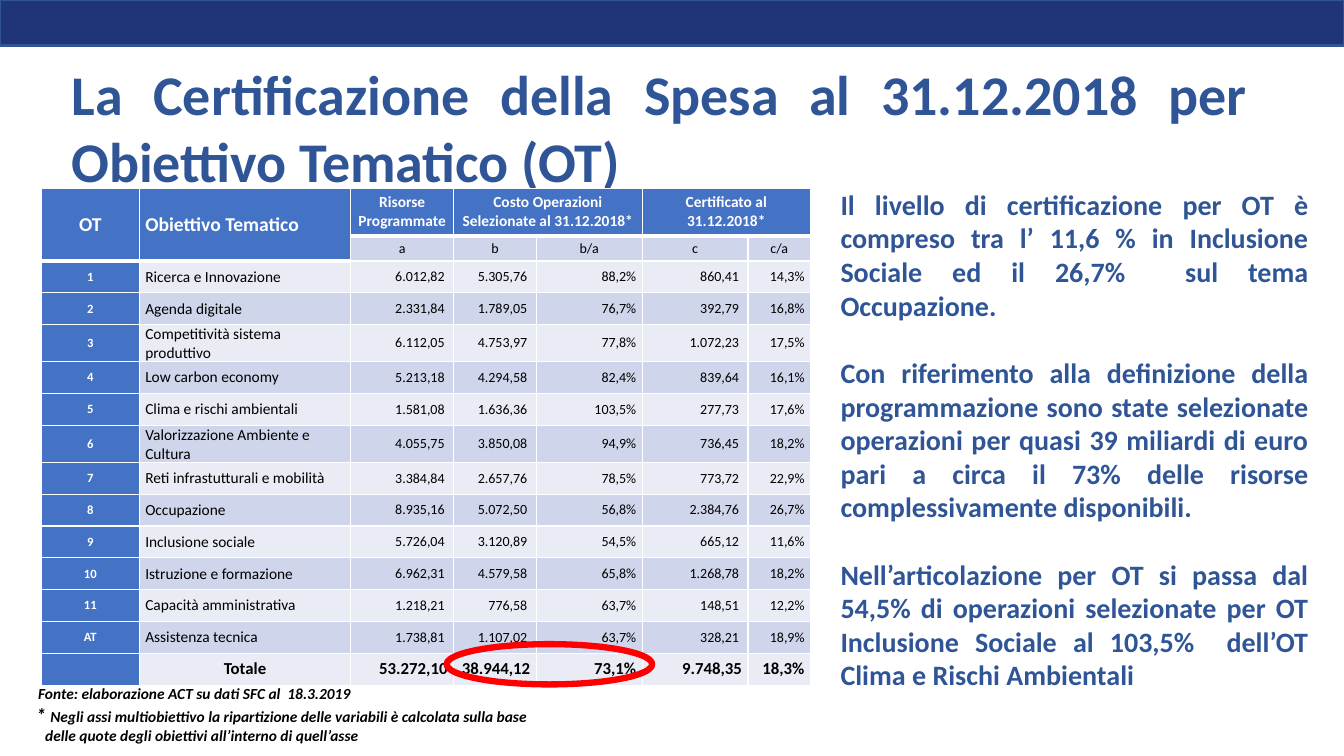
from lxml import etree
from pptx import Presentation
from pptx.dml.color import RGBColor
from pptx.enum.shapes import MSO_SHAPE
from pptx.enum.text import MSO_ANCHOR, PP_ALIGN
from pptx.oxml.ns import qn
from pptx.util import Inches, Pt

RECTANGLE, OVAL = MSO_SHAPE.RECTANGLE, MSO_SHAPE.OVAL
LEFT, CENTER, RIGHT, JUSTIFY = PP_ALIGN.LEFT, PP_ALIGN.CENTER, PP_ALIGN.RIGHT, PP_ALIGN.JUSTIFY
MIDDLE = MSO_ANCHOR.MIDDLE

WIDTH, HEIGHT = Inches(13.333), Inches(7.5)
FONT = "Calibri"
NAVY, NAVY_EDGE, HEADING = "203478", "325491", "2F5597"
HEADER, BAND_DARK, BAND_LIGHT = "4472C4", "CFD5EA", "E9EBF5"
WHITE, BLACK, RED = "FFFFFF", "000000", "FF0000"

COLUMN_SHARES = [7.28, 15.75, 7.65, 6.15, 7.88, 7.88, 4.65]
ROW_SHARES = [6.27, 3.33] + [4.21] * 13
AMOUNT_COLUMNS = (2, 3, 5)

HEADERS = ["OT", "Obiettivo Tematico", "Risorse Programmate",
           "Costo Operazioni Selezionate al 31.12.2018*", "",
           "Certificato al 31.12.2018*", ""]
SUBHEADERS = ["", "", "a", "b", "b/a", "c", "c/a"]
OBJECTIVES = [
    ["1", "Ricerca e Innovazione", "6.012,82", "5.305,76", "88,2%", "860,41", "14,3%"],
    ["2", "Agenda digitale", "2.331,84", "1.789,05", "76,7%", "392,79", "16,8%"],
    ["3", "Competitività sistema produttivo", "6.112,05", "4.753,97", "77,8%", "1.072,23", "17,5%"],
    ["4", "Low carbon economy", "5.213,18", "4.294,58", "82,4%", "839,64", "16,1%"],
    ["5", "Clima e rischi ambientali", "1.581,08", "1.636,36", "103,5%", "277,73", "17,6%"],
    ["6", "Valorizzazione Ambiente e Cultura", "4.055,75", "3.850,08", "94,9%", "736,45", "18,2%"],
    ["7", "Reti infrastutturali e mobilità", "3.384,84", "2.657,76", "78,5%", "773,72", "22,9%"],
    ["8", "Occupazione", "8.935,16", "5.072,50", "56,8%", "2.384,76", "26,7%"],
    ["9", "Inclusione sociale", "5.726,04", "3.120,89", "54,5%", "665,12", "11,6%"],
    ["10", "Istruzione e formazione", "6.962,31", "4.579,58", "65,8%", "1.268,78", "18,2%"],
    ["11", "Capacità amministrativa", "1.218,21", "776,58", "63,7%", "148,51", "12,2%"],
    ["AT", "Assistenza tecnica", "1.738,81", "1.107,02", "63,7%", "328,21", "18,9%"],
]
TOTALS = ["", "Totale", "53.272,10", "38.944,12", "73,1%", "9.748,35", "18,3%"]

TITLE = "La Certificazione della Spesa al 31.12.2018 per Obiettivo Tematico (OT)"
COMMENTS = [
    "Il livello di certificazione per OT è compreso tra l’ 11,6 % in Inclusione Sociale "
    "ed il 26,7%  sul tema Occupazione.",
    "Con riferimento alla definizione della programmazione sono state selezionate operazioni "
    "per quasi 39 miliardi di euro pari a circa il 73% delle risorse complessivamente disponibili.",
    "Nell’articolazione per OT si passa dal 54,5% di operazioni selezionate per OT Inclusione "
    "Sociale al 103,5%  dell’OT Clima e Rischi Ambientali",
]
NOTES = [
    (0.28, [("Fonte: elaborazione ACT su dati SFC al  18.3.2019", 11)]),
    (0.26, [("* ", 14),
            ("Negli assi multiobiettivo la ripartizione delle variabili è calcolata sulla base", 11)]),
    (0.35, [("delle quote degli obiettivi all’interno di quell’asse", 11)]),
]


def color(value):
    return RGBColor.from_string(value)


def across(percent):
    return round(WIDTH * percent / 100)


def down(percent):
    return round(HEIGHT * percent / 100)


def area(left, top, width, height):
    return across(left), down(top), across(width), down(height)


def add_run(paragraph, text, size, tint, bold=True, italic=False):
    run = paragraph.add_run()
    run.text = text
    run.font.name = FONT
    run.font.size = Pt(size)
    run.font.bold = bold
    run.font.italic = italic
    run.font.color.rgb = color(tint)


def add_outline_shape(slide, kind, place, line, weight, fill=None):
    shape = slide.shapes.add_shape(kind, *place)
    shape.shadow.inherit = False
    if fill:
        shape.fill.solid()
        shape.fill.fore_color.rgb = color(fill)
    else:
        shape.fill.background()
    shape.line.color.rgb = color(line)
    shape.line.width = Pt(weight)


def add_text(slide, place, paragraphs, tint, align, gap=0, italic=False):
    frame = slide.shapes.add_textbox(*place).text_frame
    frame.word_wrap = True
    for index, (indent, runs) in enumerate(paragraphs):
        paragraph = frame.paragraphs[0] if index == 0 else frame.add_paragraph()
        paragraph.alignment = align
        if index and gap:
            paragraph.space_before = Pt(gap)
        if indent:
            properties = paragraph._p.get_or_add_pPr()
            properties.set("marL", str(Inches(indent)))
            properties.set("indent", "0")
        for text, size in runs:
            add_run(paragraph, text, size, tint, italic=italic)


def set_borders(cell, top, bottom):
    properties = cell._tc.get_or_add_tcPr()
    for side, weight in (("lnL", 1), ("lnR", 1), ("lnT", top), ("lnB", bottom)):
        line = etree.SubElement(properties, qn("a:" + side), w=str(Pt(weight)))
        fill = etree.SubElement(line, qn("a:solidFill"))
        etree.SubElement(fill, qn("a:srgbClr"), val=WHITE)


def cell_style(row, column):
    if row == 0:
        return HEADER, WHITE, 14 if column < 2 else 11, True, LEFT if column == 1 else CENTER
    if column == 0:
        return HEADER, WHITE, 9, True, CENTER
    if row == 1:
        return BAND_DARK, BLACK, 10, False, CENTER
    if row == len(ROW_SHARES) - 1:
        return BAND_LIGHT, BLACK, 12, True, CENTER if column == 1 else RIGHT
    band = BAND_DARK if row % 2 else BAND_LIGHT
    if column == 1:
        return band, BLACK, 11, False, LEFT
    return band, BLACK, 10, False, RIGHT


def fill_cell(cell, row, column, text):
    fill, tint, size, bold, align = cell_style(row, column)
    under_header = row == 1 or (row == 2 and column < 2)
    above_rule = row == 0 or (row == 1 and column < 2)
    set_borders(cell, 3 if under_header else 1, 3 if above_rule else 1)
    cell.fill.solid()
    cell.fill.fore_color.rgb = color(fill)
    cell.vertical_anchor = MIDDLE
    amount = column in AMOUNT_COLUMNS and 2 <= row < len(ROW_SHARES) - 1
    cell.margin_left = Inches(0.06)
    cell.margin_right = Inches(0.09 if amount else 0.06)
    cell.margin_top = cell.margin_bottom = 0
    paragraph = cell.text_frame.paragraphs[0]
    paragraph.alignment = align
    if text:
        add_run(paragraph, text, size, tint, bold)
    else:
        etree.SubElement(paragraph._p, qn("a:endParaRPr"), sz=str(size * 100))


def add_objectives_table(slide):
    rows = [HEADERS, SUBHEADERS, *OBJECTIVES, TOTALS]
    place = area(3.08, 24.93, sum(COLUMN_SHARES), sum(ROW_SHARES))
    table = slide.shapes.add_table(len(rows), len(HEADERS), *place).table
    table.first_row = table.horz_banding = False
    for column, share in zip(table.columns, COLUMN_SHARES):
        column.width = across(share)
    for row, share in zip(table.rows, ROW_SHARES):
        row.height = down(share)
    for row, texts in enumerate(rows):
        for column, text in enumerate(texts):
            fill_cell(table.cell(row, column), row, column, text)
    for column in (0, 1):
        table.cell(0, column).merge(table.cell(1, column))
    for column in (3, 5):
        table.cell(0, column).merge(table.cell(0, column + 1))


def main():
    presentation = Presentation()
    presentation.slide_width, presentation.slide_height = WIDTH, HEIGHT
    slide = presentation.slides.add_slide(presentation.slide_layouts[6])
    add_outline_shape(slide, RECTANGLE, area(0, 0, 100, 6), NAVY_EDGE, 2, NAVY)
    add_text(slide, area(4.43, 7.2, 89.1, 19.33), [(0.02, [(TITLE, 40)])], HEADING, JUSTIFY)
    add_text(slide, area(0, 89.87, 40.65, 9.47), NOTES, BLACK, LEFT, italic=True)
    comments = [(0, [(text, 20)]) for text in COMMENTS]
    add_text(slide, area(61.8, 24.13, 36.3, 68.67), comments, HEADING, JUSTIFY, gap=24)
    add_objectives_table(slide)
    add_outline_shape(slide, OVAL, area(33.23, 85.2, 15.3, 5.33), RED, 4.5)
    presentation.save("out.pptx")


if __name__ == "__main__":
    main()
